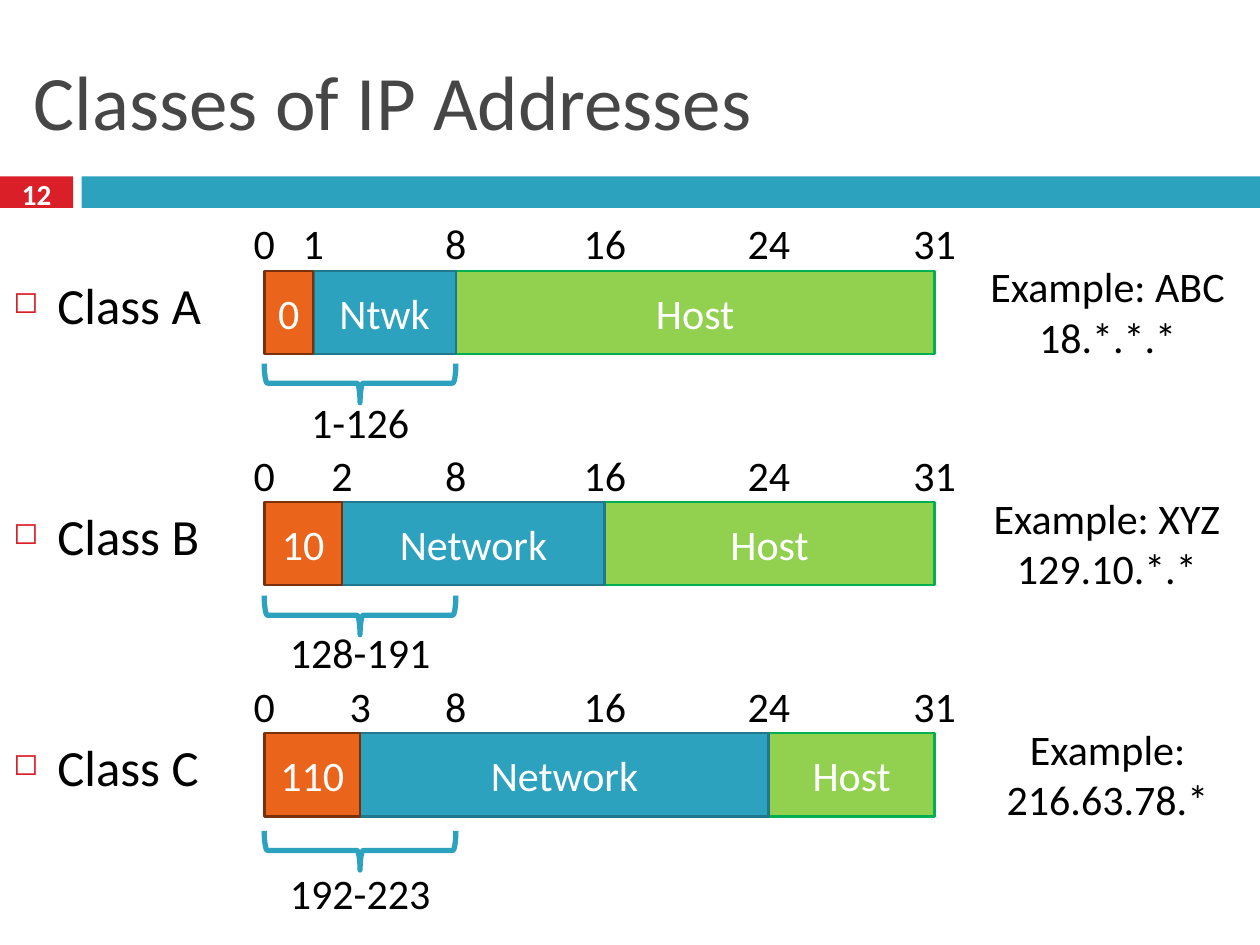
from lxml.etree import SubElement
from pptx import Presentation
from pptx.dml.color import RGBColor
from pptx.enum.shapes import MSO_SHAPE
from pptx.enum.text import MSO_ANCHOR, PP_ALIGN
from pptx.oxml.ns import qn
from pptx.util import Pt

FONT = "Calibri"
HEX = {
    "red": "DA1F28", "teal": "2DA2BF", "deep": "21788D",
    "lime": "92D050", "green": "00B050", "orange": "EB641B",
    "brown": "78310B", "grey": "464646", "black": "000000", "white": "FFFFFF",
}

# Horizontal place of each bit number
BITS = {0: 151, 1: 179, 2: 195.5, 3: 205.8, 8: 260.5, 16: 345.6, 24: 439.3, 31: 534}
TOP, STEP, HIGH = 154.8, 132.1, 47.5

# Name, prefix, prefix end, network text, network end, example lines,
# example centre, first-byte range, brace offset, range offset
ROWS = [
    ("Class A", "0", 1, "Ntwk", 8, ["Example: ABC", "18.*.*.*"],
     632.9, "1-126", 53, 68.4),
    ("Class B", "10", 2, "Network", 16, ["Example: XYZ", "129.10.*.*"],
     632.5, "128-191", 53.5, 67.7),
    ("Class C", "110", 3, "Network", 24, ["Example:", "216.63.78.*"],
     632.9, "192-223", 55.8, 73.4),
]


def tint(name):
    return RGBColor.from_string(HEX[name])


def write(frame, lines, size, hue, align=PP_ALIGN.CENTER, bold=False):
    for i, line in enumerate(lines):
        para = frame.paragraphs[0] if i == 0 else frame.add_paragraph()
        para.alignment = align
        run = para.add_run()
        run.text = line
        font = run.font
        font.name, font.size, font.bold = FONT, Pt(size), bold
        font.color.rgb = tint(hue)


def add_text(slide, box, lines, size=24, hue="black", align=PP_ALIGN.CENTER,
             anchor=MSO_ANCHOR.MIDDLE, wrap=True, bold=False):
    frame = slide.shapes.add_textbox(*map(Pt, box)).text_frame
    frame.word_wrap = wrap
    frame.vertical_anchor = anchor
    write(frame, lines, size, hue, align, bold)
    return frame


def add_box(slide, box, fill, edge=None, text=None):
    shape = slide.shapes.add_shape(MSO_SHAPE.RECTANGLE, *map(Pt, box))
    shape.shadow.inherit = False
    shape.fill.solid()
    shape.fill.fore_color.rgb = tint(fill)
    if edge:
        shape.line.color.rgb = tint(edge)
        shape.line.width = Pt(1.5)
    else:
        shape.line.fill.background()
    if text:
        shape.text_frame.vertical_anchor = MSO_ANCHOR.MIDDLE
        write(shape.text_frame, [text], 24, "white")


def add_brace(slide, left, right, top):
    # A left brace turned to point down: its height becomes the span
    thick, span = 22.3, right - left
    box = ((left + right - thick) / 2, top + (thick - span) / 2, thick, span)
    brace = slide.shapes.add_shape(MSO_SHAPE.LEFT_BRACE, *map(Pt, box))
    brace.rotation = 270
    brace.shadow.inherit = False
    brace.fill.background()
    brace.line.color.rgb = tint("teal")
    brace.line.width = Pt(3)


def add_bullet(slide, box, text):
    frame = add_text(slide, box, [text], 29, align=PP_ALIGN.LEFT,
                     anchor=MSO_ANCHOR.TOP)
    para = frame.paragraphs[0]
    para.space_before = Pt(7)
    props = para._p.get_or_add_pPr()
    props.set("marL", str(Pt(25.2)))
    props.set("indent", str(-Pt(25.2)))
    color = SubElement(props, qn("a:buClr"))
    SubElement(color, qn("a:srgbClr"), val=HEX["red"])
    SubElement(props, qn("a:buSzPct"), val="60000")
    SubElement(props, qn("a:buChar"), char="◻")


def add_row(slide, top, row):
    name, code, split, net, end, sample, mid, span, drop, low = row
    add_bullet(slide, (0.5, top - 2, 145.4, 42.5), name)

    # Address fields
    fields = [
        (end, 31, "lime", "green", "Host"),
        (split, end, "teal", "deep", net),
        (0, split, "orange", "brown", code),
    ]
    for start, stop, fill, edge, text in fields:
        left = BITS[start]
        add_box(slide, (left, top, BITS[stop] - left, HIGH), fill, edge, text)

    # Bit numbers
    for bit in (0, split, 8, 16, 24, 31):
        add_text(slide, (BITS[bit] - 23.4, top - 39.6, 46.8, HIGH), [str(bit)])

    # Range of the first byte, and example
    add_brace(slide, BITS[0], BITS[8], top + drop)
    add_text(slide, (154, top + low, 103.6, 36), [span],
             anchor=MSO_ANCHOR.TOP, wrap=False)
    add_text(slide, (mid - 85, top - 9.2, 170, 65.5), sample,
             anchor=MSO_ANCHOR.TOP, wrap=False)


def main():
    deck = Presentation()
    deck.slide_width, deck.slide_height = Pt(720), Pt(540)
    slide = deck.slides.add_slide(deck.slide_layouts[6])

    # Heading and band
    add_box(slide, (0, 100.8, 41.8, 18), "red")
    add_box(slide, (46.6, 100.8, 673.4, 18), "teal")
    add_text(slide, (12.2, 18, 696, 78), ["Classes of IP Addresses"], 44,
             "grey", PP_ALIGN.LEFT)
    add_text(slide, (0, 98.8, 41.8, 24), ["12"], 16.6, "white", bold=True)

    # One row for each class
    for i, row in enumerate(ROWS):
        add_row(slide, TOP + STEP * i, row)

    deck.save("out.pptx")


if __name__ == "__main__":
    main()
